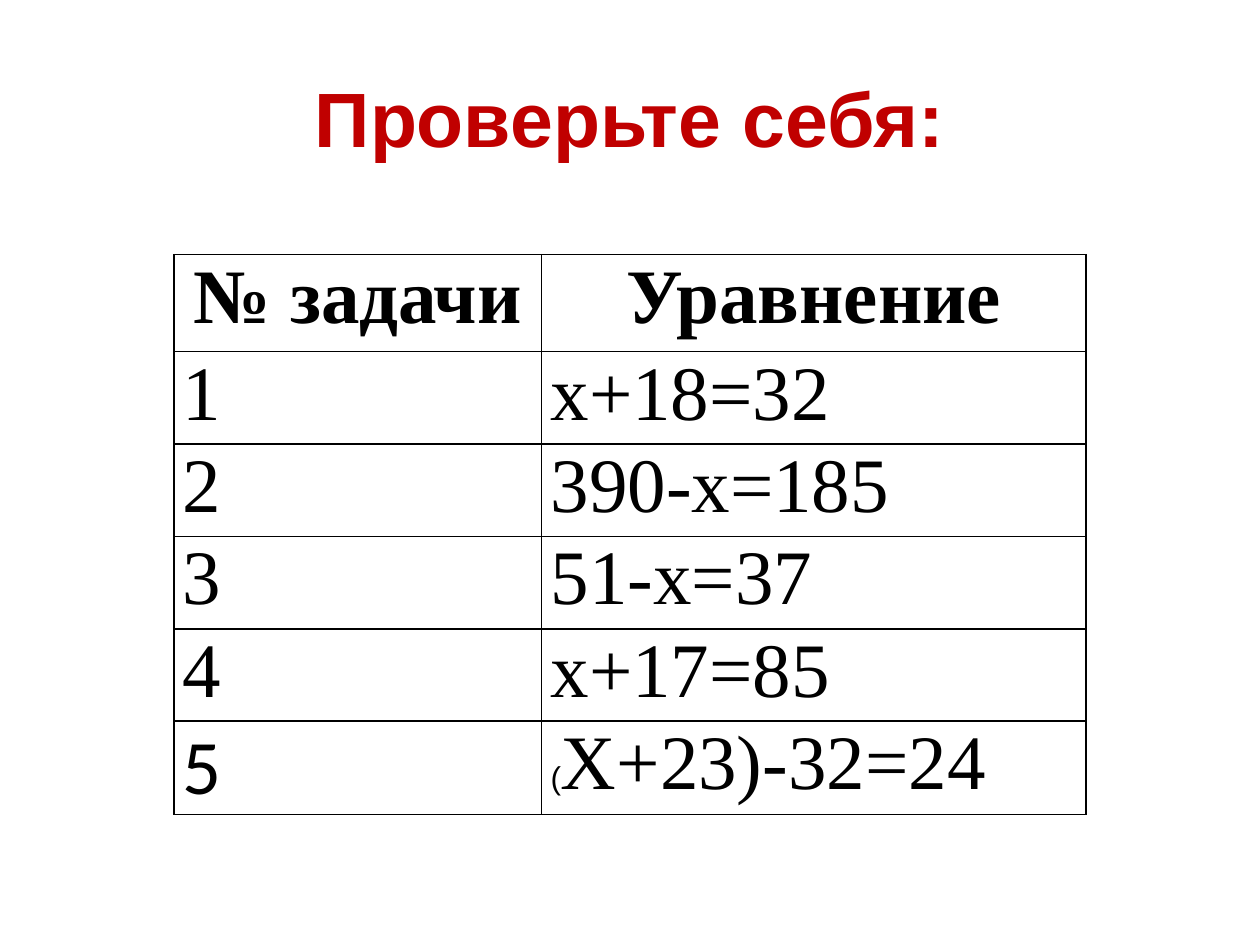
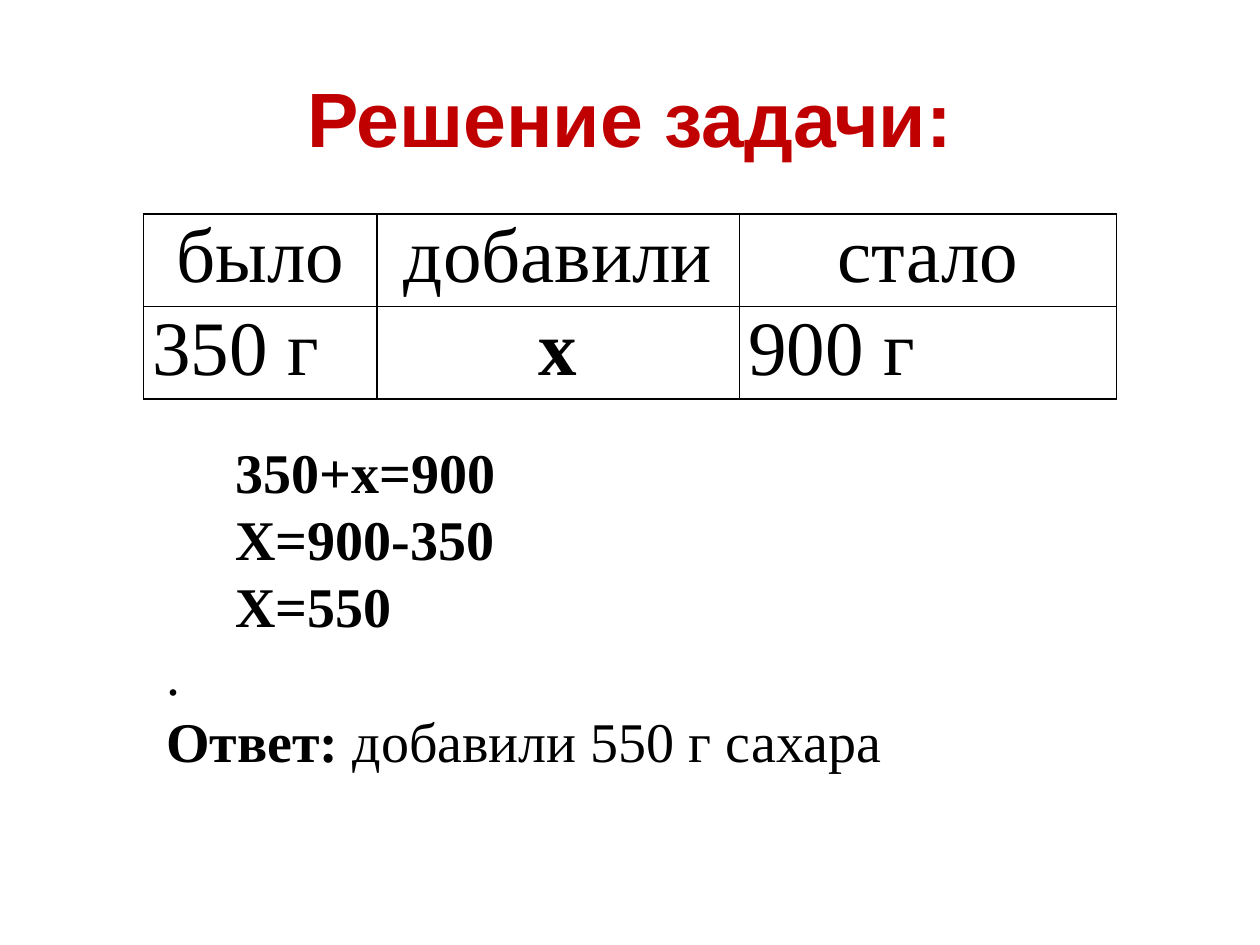
import pptx
import pptx.util
import pptx.dml.color
import pptx.enum.text
import pptx.oxml.ns
from lxml import etree

Inches, Pt = pptx.util.Inches, pptx.util.Pt
ALIGN = pptx.enum.text.PP_ALIGN
ANCHOR = pptx.enum.text.MSO_ANCHOR

# Shared look
COLORS = {"title": "C00000", "ink": "000000", "paper": "FFFFFF"}
SANS, SERIF, NUMERAL = "Arial", "Times New Roman", "Calibri"
TITLE_BOX = (0.5, 0.3, 9, 1.25)
BIG, SOLUTION_SIZE = 44, 32


def run(text, size=BIG, font=SERIF, bold=False, color="ink"):
    return {"text": text, "size": size, "font": font, "bold": bold, "color": color}


# Content: a table cell is (centred, runs)
def left(*runs):
    return False, runs


def centred(text, bold=False):
    return True, [run(text, bold=bold)]


EQUATIONS = ["х+18=32", "390-х=185", "51-х=37", "х+17=85"]
CHECK = {
    "title": "Проверьте себя:",
    "at": (1.38, 2.02),
    "columns": [2.92, 4.32],
    "heights": [0.77] + [0.67] * len(EQUATIONS) + [0.74],
    "rows": [
        [centred("№ задачи", bold=True), centred("Уравнение", bold=True)],
        *[[left(run(str(number))), left(run(equation))]
          for number, equation in enumerate(EQUATIONS, 1)],
        [left(run("5", font=NUMERAL)),
         left(run("(", 18, SANS), run("Х+23)-32=24"))],
    ],
}
SOLUTION = {
    "title": "Решение задачи:",
    "at": (1.14, 1.7),
    "columns": [1.85, 2.88, 2.99],
    "heights": [0.67, 0.67],
    "rows": [
        [centred(word) for word in ("было", "добавили", "стало")],
        [left(run("350 г")), centred("х", bold=True), left(run("900 г"))],
    ],
}
# Solution lines: (indent, [(text, bold)])
STEP_INDENT = 0.55
STEPS_BOX = (1.22, 3.41, 6.61, 2.79)
STEPS = [
    *[(STEP_INDENT, [(step, True)]) for step in ("350+х=900", "Х=900-350", "Х=550")],
    (0, [(".", False)]),
    (0, [("Ответ: ", True), ("добавили 550 г сахара", False)]),
]


def rgb(name):
    return pptx.dml.color.RGBColor.from_string(COLORS[name])


def write_runs(paragraph, runs):
    for part in runs:
        piece = paragraph.add_run()
        piece.text = part["text"]
        piece.font.size = Pt(part["size"])
        piece.font.name = part["font"]
        piece.font.bold = part["bold"]
        piece.font.color.rgb = rgb(part["color"])


def add_text_frame(slide, box):
    frame = slide.shapes.add_textbox(*map(Inches, box)).text_frame
    frame.word_wrap = True
    frame.vertical_anchor = ANCHOR.MIDDLE
    return frame


def add_borders(cell):
    properties = cell._tc.get_or_add_tcPr()
    qn = pptx.oxml.ns.qn
    for side in ("lnL", "lnR", "lnT", "lnB"):
        line = etree.SubElement(properties, qn("a:" + side), w=str(Pt(1)))
        fill = etree.SubElement(line, qn("a:solidFill"))
        etree.SubElement(fill, qn("a:srgbClr"), val=COLORS["ink"])


def add_table(slide, content):
    columns, heights = content["columns"], content["heights"]
    box = (*content["at"], sum(columns), sum(heights))
    table = slide.shapes.add_table(
        len(heights), len(columns), *map(Inches, box)).table
    table.first_row = table.horz_banding = False
    for column, width in zip(table.columns, columns):
        column.width = Inches(width)
    for row, height, cells in zip(table.rows, heights, content["rows"]):
        row.height = Inches(height)
        for cell, (is_centred, runs) in zip(row.cells, cells):
            cell.margin_left = cell.margin_right = Inches(0.07)
            cell.margin_top = cell.margin_bottom = 0
            add_borders(cell)
            cell.fill.solid()
            cell.fill.fore_color.rgb = rgb("paper")
            paragraph = cell.text_frame.paragraphs[0]
            paragraph.alignment = ALIGN.CENTER if is_centred else ALIGN.LEFT
            write_runs(paragraph, runs)


def add_slide(deck, content):
    slide = deck.slides.add_slide(deck.slide_layouts[6])
    title = add_text_frame(slide, TITLE_BOX).paragraphs[0]
    title.alignment = ALIGN.CENTER
    write_runs(title, [run(content["title"], font=SANS, bold=True, color="title")])
    add_table(slide, content)
    return slide


def add_steps(slide):
    frame = add_text_frame(slide, STEPS_BOX)
    frame.auto_size = pptx.enum.text.MSO_AUTO_SIZE.SHAPE_TO_FIT_TEXT
    for index, (indent, parts) in enumerate(STEPS):
        paragraph = frame.add_paragraph() if index else frame.paragraphs[0]
        if indent:
            paragraph._p.get_or_add_pPr().set("marL", str(Inches(indent)))
        write_runs(paragraph, [run(text, SOLUTION_SIZE, bold=bold)
                               for text, bold in parts])


def main():
    deck = pptx.Presentation()
    deck.slide_width, deck.slide_height = Inches(10), Inches(7.5)
    add_slide(deck, CHECK)
    add_steps(add_slide(deck, SOLUTION))
    deck.save("out.pptx")


if __name__ == "__main__":
    main()
